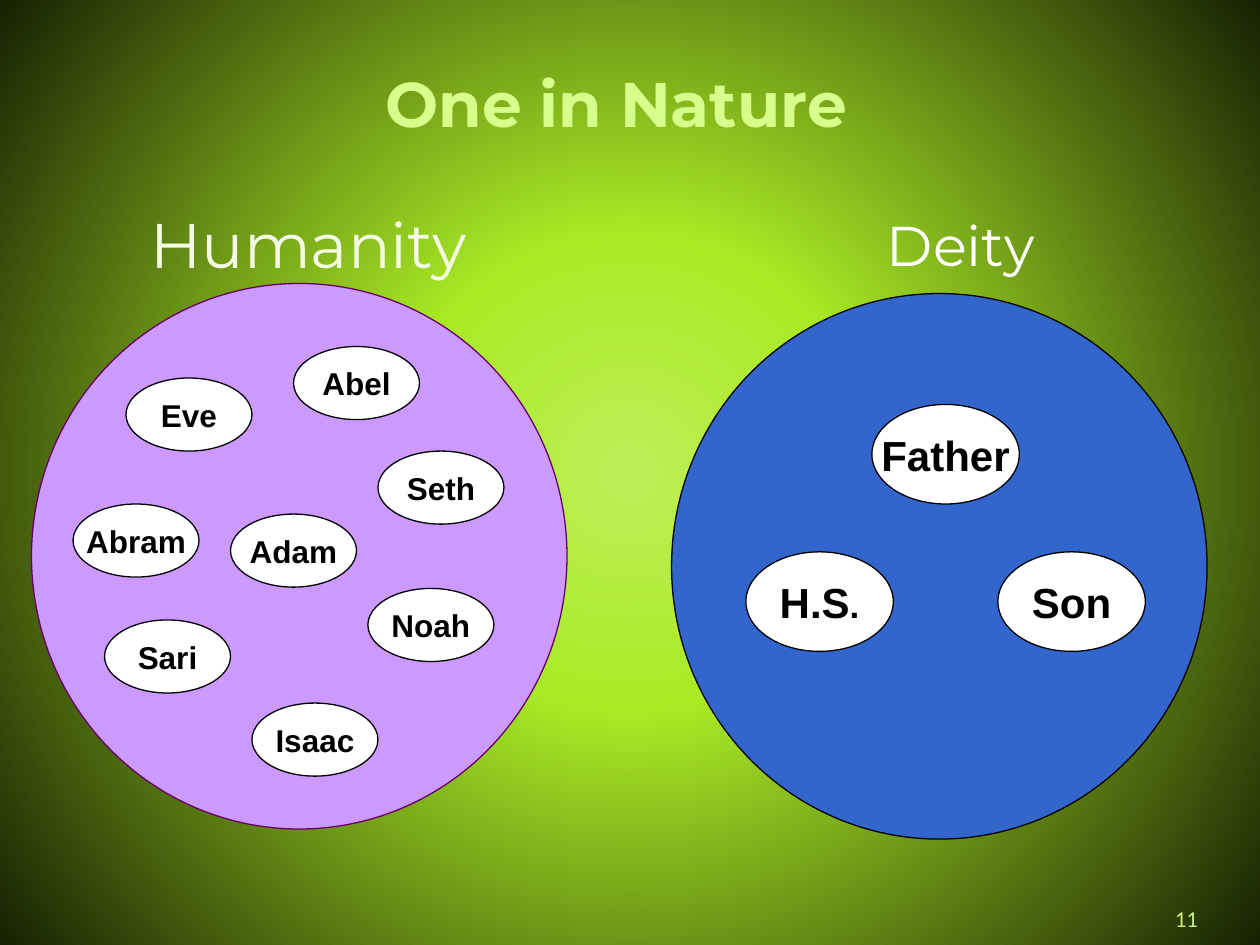
import dataclasses

import pptx
import pptx.dml.color
import pptx.enum.shapes
import pptx.enum.text
import pptx.oxml
import pptx.oxml.ns
import pptx.util

Inches = pptx.util.Inches
Anchor = pptx.enum.text.MSO_ANCHOR


@dataclasses.dataclass(frozen=True)
class Theme:
    heading_font: str = "Montserrat"
    label_font: str = "Arial"
    number_font: str = "Calibri"
    title: str = "D6FF8C"
    title_outline: str = "434128"
    humanity_heading: str = "F4FCE4"
    white: str = "FFFFFF"
    black: str = "000000"
    humanity: str = "CC99FF"
    humanity_line: str = "660066"
    deity: str = "3366CC"
    number: str = "CAF278"
    background: tuple = ((0, "BDEF57"), (30, "AAEA25"), (100, "172103"))
    title_size: int = 36
    deity_heading_size: int = 32
    person_size: int = 24
    full_stop_size: int = 20
    name_size: int = 18
    number_size: int = 13


def rgb(color):
    return pptx.dml.color.RGBColor.from_string(color)


class SlideBuilder:
    def __init__(self, slide, theme):
        self.slide = slide
        self.theme = theme

    def background(self):
        """Fill the background with a circular gradient from the centre."""
        self.slide.background.fill.gradient()
        gradient = self.slide.element.find(".//" + pptx.oxml.ns.qn("a:gradFill"))
        stops = "".join(
            f'<a:gs pos="{position * 1000}"><a:srgbClr val="{color}"/></a:gs>'
            for position, color in self.theme.background
        )
        circle = pptx.oxml.parse_xml(
            f'<a:gradFill {pptx.oxml.ns.nsdecls("a")} rotWithShape="1">'
            f"<a:gsLst>{stops}</a:gsLst>"
            '<a:path path="circle"><a:fillToRect l="50000" t="50000" r="50000" b="50000"/></a:path>'
            "</a:gradFill>"
        )
        gradient.getparent().replace(gradient, circle)

    def set_text(self, shape, text, font, size, color, bold=False, anchor=Anchor.TOP, wrap=False):
        frame = shape.text_frame
        frame.word_wrap = wrap
        frame.auto_size = pptx.enum.text.MSO_AUTO_SIZE.NONE
        frame.vertical_anchor = anchor
        para = frame.paragraphs[0]
        para.text = text
        para.alignment = pptx.enum.text.PP_ALIGN.CENTER
        para.font.name = font
        para.font.size = pptx.util.Pt(size)
        para.font.bold = bold
        para.font.color.rgb = rgb(color)
        return para

    def title(self, text, left, top, width, height):
        title = self.slide.shapes.title
        title.left, title.top = Inches(left), Inches(top)
        title.width, title.height = Inches(width), Inches(height)
        theme = self.theme
        para = self.set_text(
            title, text, theme.heading_font, theme.title_size, theme.title, bold=True
        )
        outline = pptx.oxml.parse_xml(
            f'<a:ln {pptx.oxml.ns.nsdecls("a")} w="12700"><a:solidFill>'
            f'<a:srgbClr val="{theme.title_outline}"/></a:solidFill></a:ln>'
        )
        para.runs[0].font._element.insert(0, outline)

    def text(self, text, left, top, width, height, font, size, color, **style):
        box = self.slide.shapes.add_textbox(
            Inches(left), Inches(top), Inches(width), Inches(height)
        )
        self.set_text(box, text, font, size, color, **style)

    def ellipse(self, left, top, width, height, fill, line):
        shape = self.slide.shapes.add_shape(
            pptx.enum.shapes.MSO_SHAPE.OVAL,
            Inches(left), Inches(top), Inches(width), Inches(height),
        )
        shape.shadow.inherit = False
        shape.fill.solid()
        shape.fill.fore_color.rgb = rgb(fill)
        shape.line.color.rgb = rgb(line)
        shape.line.width = pptx.util.Pt(0.75)
        return shape

    def member(self, name, left, top, width, height, size):
        """Add a white ellipse holding one name and return its paragraph."""
        theme = self.theme
        shape = self.ellipse(left, top, width, height, theme.white, theme.black)
        return self.set_text(
            shape, name, theme.label_font, size, theme.black, bold=True, anchor=Anchor.MIDDLE
        )


def main():
    deck = pptx.Presentation()
    deck.slide_width, deck.slide_height = Inches(10), Inches(7.5)
    theme = Theme()
    page = SlideBuilder(deck.slides.add_slide(deck.slide_layouts[5]), theme)

    page.background()
    page.title("One in Nature", 2.33, 0.46, 5.12, 0.71)
    page.ellipse(0.25, 2.25, 4.25, 4.33, theme.humanity, theme.humanity_line)
    page.ellipse(5.33, 2.33, 4.25, 4.33, theme.deity, theme.black)
    page.text("Humanity", 1.15, 1.58, 2.6, 0.71,
              theme.heading_font, theme.title_size, theme.humanity_heading)
    page.text("Deity", 7, 1.62, 1.25, 0.62,
              theme.heading_font, theme.deity_heading_size, theme.white)

    humans = (
        ("Eve", 1, 3), ("Abel", 2.33, 2.75), ("Noah", 2.92, 4.67), ("Abram", 0.58, 4),
        ("Seth", 3, 3.58), ("Isaac", 2, 5.58), ("Sari", 0.83, 4.92), ("Adam", 1.83, 4.08),
    )
    for name, left, top in humans:
        page.member(name, left, top, 1, 0.58, theme.name_size)

    for name, left, top in (("H.S", 5.92, 4.38), ("Son", 7.92, 4.38), ("Father", 6.92, 3.21)):
        para = page.member(name, left, top, 1.17, 0.79, theme.person_size)
        if name == "H.S":
            full_stop = para.add_run()
            full_stop.text = "."
            full_stop.font.size = pptx.util.Pt(theme.full_stop_size)

    page.text("11", 8.83, 7.17, 1.17, 0.24, theme.number_font, theme.number_size,
              theme.number, anchor=Anchor.MIDDLE, wrap=True)
    deck.save("out.pptx")


if __name__ == "__main__":
    main()
